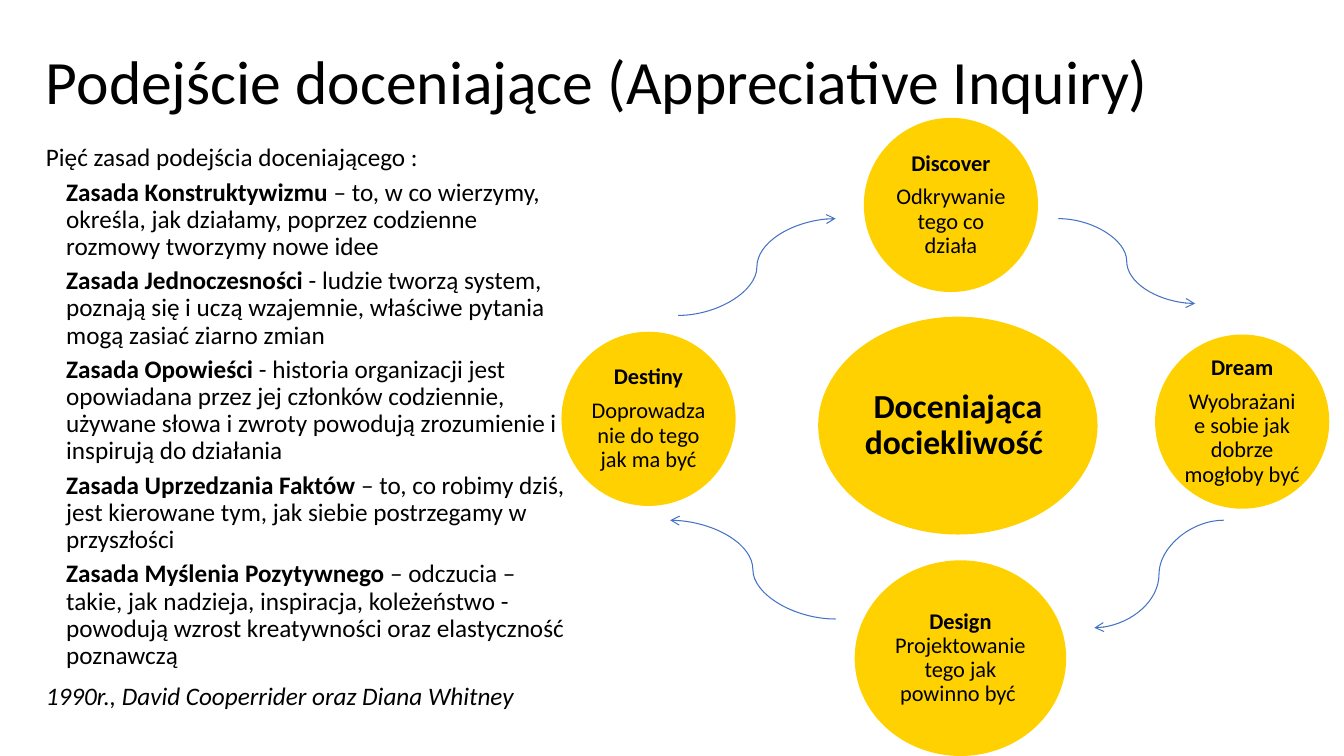
from lxml import etree
from pptx import Presentation
from pptx.dml.color import RGBColor
from pptx.enum.shapes import MSO_CONNECTOR, MSO_SHAPE
from pptx.enum.text import MSO_ANCHOR, PP_ALIGN
from pptx.oxml.ns import qn
from pptx.util import Cm, Pt

OVAL = MSO_SHAPE.OVAL
CURVE = MSO_CONNECTOR.CURVE
MIDDLE, TOP = MSO_ANCHOR.MIDDLE, MSO_ANCHOR.TOP
LEFT, CENTER = PP_ALIGN.LEFT, PP_ALIGN.CENTER

YELLOW = RGBColor(0xFF, 0xD1, 0x01)
BLUE = RGBColor(0x44, 0x72, 0xC4)
BLACK = RGBColor(0, 0, 0)
FONT = "Calibri"

# Content
TITLE = "Podejście doceniające (Appreciative Inquiry)"
INTRO = "Pięć zasad podejścia doceniającego :"
RULES = [
    ("Zasada Konstruktywizmu ",
     "– to, w co wierzymy, określa, jak działamy, poprzez codzienne "
     "rozmowy tworzymy nowe idee"),
    ("Zasada Jednoczesności ",
     "- ludzie tworzą system, poznają się i uczą wzajemnie, właściwe "
     "pytania mogą zasiać ziarno zmian"),
    ("Zasada Opowieści ",
     "- historia organizacji jest opowiadana przez jej członków codziennie, "
     "używane słowa i zwroty powodują zrozumienie i inspirują do działania"),
    ("Zasada Uprzedzania Faktów ",
     "– to, co robimy dziś, jest kierowane tym, jak siebie postrzegamy "
     "w przyszłości"),
    ("Zasada Myślenia Pozytywnego ",
     "– odczucia – takie, jak nadzieja, inspiracja, koleżeństwo - powodują "
     "wzrost kreatywności oraz elastyczność poznawczą"),
]
SOURCE = "1990r., David Cooperrider oraz Diana Whitney"

# Ovals: left, top, width, height in cm; text size; space after; paragraphs of (text, style)
OVALS = [
    (20.62, 7.98, 7.04, 5.49, 24, 10, [[("Doceniająca dociekliwość ", "b")]]),
    (21.77, 2.97, 4.39, 4.39, 16, 7,
     [[("Discover", "b")], [("Odkrywanie tego co działa", "")]]),
    (29.11, 8.43, 4.39, 4.39, 16, 7,
     [[("Dream", "b")], [("Wyobrażanie sobie jak dobrze mogłoby być", "")]]),
    (21.54, 14.12, 5.33, 4.93, 16, 7,
     [[("Design", "b"), (" Projektowanie tego jak powinno być ", "")]]),
    (14.15, 8.36, 4.39, 4.39, 16, 7,
     [[("Destiny", "b")], [("Doprowadzanie do tego jak ma być", "")]]),
]

# Arrows: start x, y and end x, y in cm
ARROWS = [
    (26.67, 5.51, 30.12, 7.65),
    (30.84, 13.11, 27.58, 15.82),
    (21.06, 15.6, 16.89, 13.11),
    (17.09, 7.95, 21.06, 5.51),
]

deck = Presentation()
deck.slide_width, deck.slide_height = Cm(33.87), Cm(19.05)
slide = deck.slides.add_slide(deck.slide_layouts[6])
shapes = slide.shapes


def write(frame, paras, size, align=LEFT, anchor=TOP):
    """Fill a frame with paragraphs of (runs, space before, space after, indent)."""
    frame.word_wrap = True
    frame.vertical_anchor = anchor
    for i, (runs, before, after, indent) in enumerate(paras):
        para = frame.add_paragraph() if i else frame.paragraphs[0]
        para.alignment = align
        para.line_spacing = 0.9
        para.space_before, para.space_after = Pt(before), Pt(after)
        if indent:
            para._p.get_or_add_pPr().set("marL", str(Cm(indent)))
        for text, style in runs:
            run = para.add_run()
            run.text = text
            font = run.font
            font.name, font.size = FONT, Pt(size)
            font.bold, font.italic = style == "b", style == "i"
            font.color.rgb = BLACK


# Title and list of rules
title = shapes.add_textbox(Cm(0.91), Cm(0.28), Cm(29.21), Cm(3.68))
write(title.text_frame, [([(TITLE, "")], 0, 0, 0)], 44, anchor=MIDDLE)

body = shapes.add_textbox(Cm(0.91), Cm(3.53), Cm(13.59), Cm(15.52))
lines = [([(INTRO, "")], 10, 0, 0)]
lines += [([(name, "b"), (text, "")], 5, 0, 0.51) for name, text in RULES]
lines += [([(SOURCE, "i")], 10, 0, 0)]
write(body.text_frame, lines, 18)

# Cycle of ovals
for x, y, wide, high, size, after, paras in OVALS:
    oval = shapes.add_shape(OVAL, Cm(x), Cm(y), Cm(wide), Cm(high))
    oval.shadow.inherit = False
    oval.fill.solid()
    oval.fill.fore_color.rgb = YELLOW
    oval.line.fill.background()
    frame = oval.text_frame
    frame.margin_left = frame.margin_right = Cm(0.07)
    frame.margin_top = frame.margin_bottom = Cm(0.07)
    write(frame, [(runs, 0, after, 0) for runs in paras], size, CENTER, MIDDLE)

# Curved arrows
for ends in ARROWS:
    arrow = shapes.add_connector(CURVE, *map(Cm, ends))
    arrow.line.color.rgb = BLUE
    arrow.line.width = Pt(0.75)
    etree.SubElement(arrow.line._get_or_add_ln(), qn("a:tailEnd"), type="arrow")
    etree.SubElement(arrow._element.spPr, qn("a:effectLst"))

deck.save("out.pptx")
